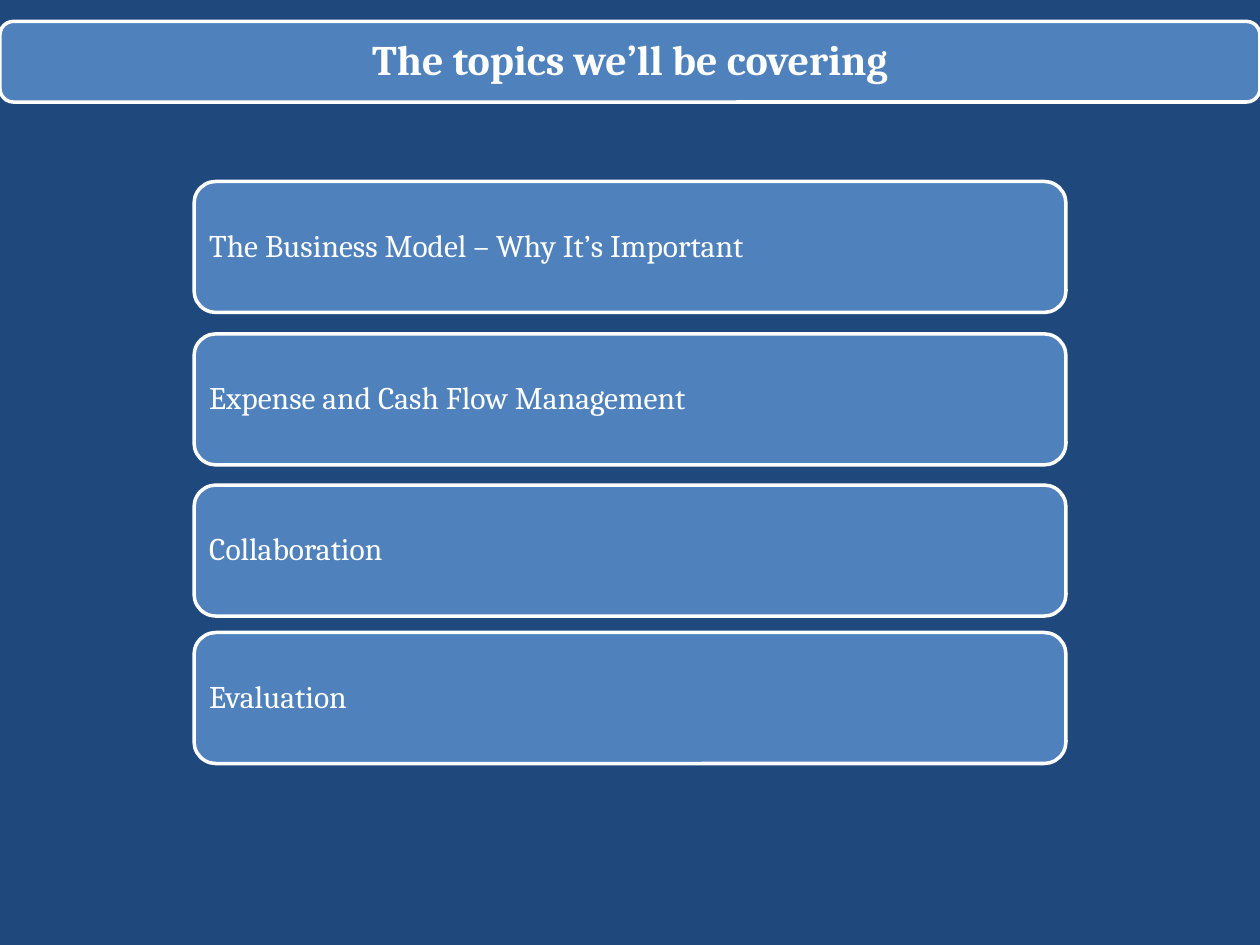
"""Build the agenda slide: a title bar above four stacked topic boxes."""
from pptx import Presentation
from pptx.dml.color import RGBColor
from pptx.enum.shapes import MSO_SHAPE
from pptx.enum.text import MSO_ANCHOR, MSO_AUTO_SIZE, PP_ALIGN
from pptx.util import Inches, Pt

ROUNDED = MSO_SHAPE.ROUNDED_RECTANGLE
MIDDLE = MSO_ANCHOR.MIDDLE
NO_FIT = MSO_AUTO_SIZE.NONE
LEFT, CENTER = PP_ALIGN.LEFT, PP_ALIGN.CENTER
TITLE_ONLY = 5

TITLE = "The topics we’ll be covering"
TOPICS = [
    (1.44, "The Business Model – Why It’s Important"),
    (2.65, "Expense and Cash Flow Management"),
    (3.85, "Collaboration"),
    (5.02, "Evaluation"),
]

THEME = {
    "background": RGBColor(0x1F, 0x49, 0x7D),
    "box": RGBColor(0x4F, 0x81, 0xBD),
    "light": RGBColor(0xFF, 0xFF, 0xFF),
    "font": "Cambria",
    "title_size": Pt(24),
    "topic_size": Pt(18),
    "outline": Pt(2),
}
SLIDE_WIDTH, SLIDE_HEIGHT = 10, 7.5
BAR = (0, 0.17, SLIDE_WIDTH, 0.64)
BAR_INSET = 0.03
BOX_WIDTH, BOX_HEIGHT = 6.92, 1.04


def set_values(target, values):
    for name, value in values.items():
        setattr(target, name, value)


def add_box(slide, left, top, width, height):
    shape = slide.shapes.add_shape(ROUNDED, *map(Inches, (left, top, width, height)))
    shape.shadow.inherit = False
    shape.fill.solid()
    shape.fill.fore_color.rgb = THEME["box"]
    shape.line.color.rgb = THEME["light"]
    shape.line.width = THEME["outline"]
    return shape


def write_text(shape, text, size, margin, alignment, bold):
    frame = shape.text_frame
    frame.text = text
    sides = ("left", "top", "right", "bottom")
    set_values(frame, {f"margin_{side}": Inches(margin) for side in sides})
    set_values(frame, {"word_wrap": True, "auto_size": NO_FIT, "vertical_anchor": MIDDLE})
    paragraph = frame.paragraphs[0]
    set_values(paragraph, {"alignment": alignment, "line_spacing": 0.9, "space_before": Pt(0)})
    font = paragraph.runs[0].font
    set_values(font, {"name": THEME["font"], "size": size, "bold": bold})
    font.color.rgb = THEME["light"]


def add_title(slide):
    bar = add_box(slide, *BAR)
    title = slide.shapes.title
    bar._element.addnext(title._element)
    left, top, width, height = BAR
    set_values(title, {
        "left": Inches(left + BAR_INSET),
        "top": Inches(top + BAR_INSET),
        "width": Inches(width - 2 * BAR_INSET),
        "height": Inches(height - 2 * BAR_INSET),
    })
    write_text(title, TITLE, THEME["title_size"], 0.1, CENTER, True)


def main():
    presentation = Presentation()
    presentation.slide_width = Inches(SLIDE_WIDTH)
    presentation.slide_height = Inches(SLIDE_HEIGHT)
    slide = presentation.slides.add_slide(presentation.slide_layouts[TITLE_ONLY])
    slide.background.fill.solid()
    slide.background.fill.fore_color.rgb = THEME["background"]
    add_title(slide)
    box_left = (SLIDE_WIDTH - BOX_WIDTH) / 2
    for top, topic in TOPICS:
        box = add_box(slide, box_left, top, BOX_WIDTH, BOX_HEIGHT)
        write_text(box, topic, THEME["topic_size"], 0.07, LEFT, False)
    presentation.save("out.pptx")


if __name__ == "__main__":
    main()
